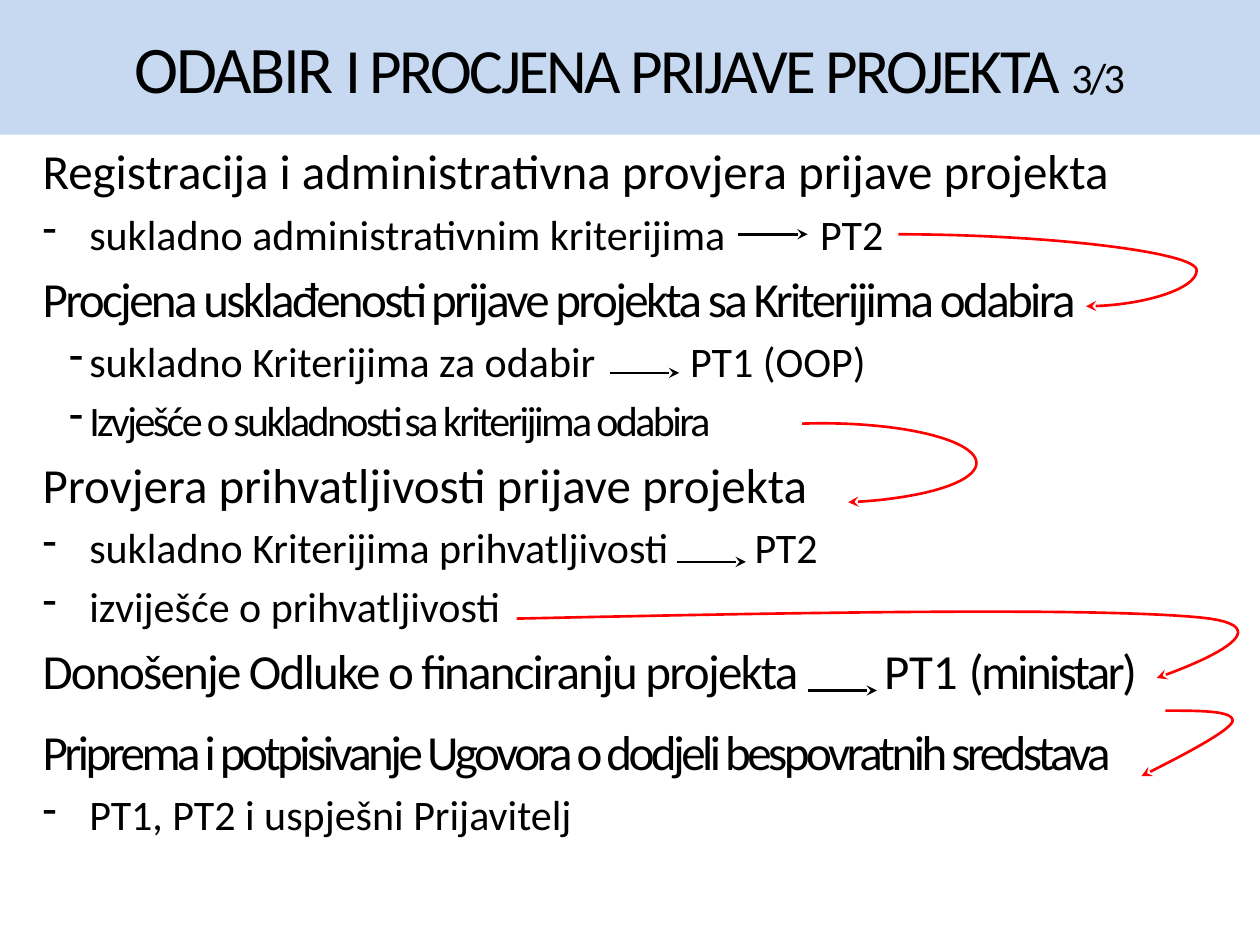
from dataclasses import dataclass

from lxml.etree import SubElement
from pptx import Presentation
from pptx.dml.color import RGBColor
from pptx.enum.shapes import MSO_CONNECTOR, MSO_SHAPE
from pptx.enum.text import MSO_ANCHOR, PP_ALIGN
from pptx.oxml.ns import qn
from pptx.util import Pt


@dataclass(frozen=True)
class Theme:
    """Colours, font and type sizes of the slide."""
    font: str = "Calibri"
    ink: RGBColor = RGBColor(0, 0, 0)
    band: RGBColor = RGBColor(0xC6, 0xD9, 0xF1)
    accent: RGBColor = RGBColor(0xFF, 0, 0)
    title: int = 36
    title_lead: int = 38
    step: int = 28
    detail: int = 24
    line: float = 1.5
    space_width: float = 0.226


THEME = Theme()
STEP, DETAIL = THEME.step, THEME.detail
WIDE, NARROW = (26.64, -26.64), (26.64, -11.52)


def gap(width, size):
    """Return a single space stretched to the given width."""
    return " ", round(width - size * THEME.space_width, 2)


STEPS = [
    (STEP, None, [("Registracija i administrativna provjera prijave projekta", 0)]),
    (DETAIL, WIDE, [("sukladno administrativnim kriterijima", 0), gap(54, DETAIL), ("PT2", 0)]),
    (STEP, None, [("Procjena usklađenosti prijave projekta sa Kriterijima odabira", -1.5)]),
    (DETAIL, NARROW, [("sukladno Kriterijima za odabir", 0), gap(54, DETAIL), ("PT1 (OOP)", 0)]),
    (DETAIL, NARROW, [("Izvješće o sukladnosti sa kriterijima odabira", -1.5)]),
    (STEP, None, [("Provjera prihvatljivosti prijave projekta", 0)]),
    (DETAIL, WIDE, [("sukladno Kriterijima prihvatljivosti", 0), gap(49, DETAIL), ("PT2", 0)]),
    (DETAIL, WIDE, [("izviješće o prihvatljivosti", 0)]),
    (STEP, None, [("Donošenje Odluke o financiranju projekta", -1), gap(49, STEP),
                  ("PT1 ", 0), ("(ministar)", -1.5)]),
    (STEP, None, [("Priprema i potpisivanje Ugovora o dodjeli bespovratnih sredstava", -2)]),
    (DETAIL, WIDE, [("PT1, PT2 i uspješni Prijavitelj", 0)]),
]
EXTRA_SPACE = {9: 7}

INLINE_ARROWS = [(404.6, 56.9), (331.2, 136.1), (369.3, 244.1), (444.2, 317.6)]
INLINE_LENGTH = 39.6
RETURN_CURVES = [
    [(277.9, 276.5), (442.8, 272.9), (606.9, 270), (668.1, 275.8),
     (729.3, 281.6), (643.7, 310.4), (643.7, 310.4)],
    [(648.7, 329.1), (668.9, 329.1), (689, 329.1), (686.9, 335.6),
     (684, 341.3), (659.5, 354.3), (635, 366.5)],
]


def add_run(paragraph, text, spacing):
    """Add a run with letter spacing in points."""
    run = paragraph.add_run()
    run.text = text
    if spacing:
        run.font._element.set("spc", str(round(spacing * 100)))
    return run


def style_paragraph(paragraph, size=None):
    """Give a paragraph the theme font and colour."""
    paragraph.font.name = THEME.font
    paragraph.font.color.rgb = THEME.ink
    if size:
        paragraph.font.size = Pt(size)


def add_title(slide, left, top, width, height):
    """Place the title band."""
    band = slide.shapes.add_shape(MSO_SHAPE.RECTANGLE, Pt(left), Pt(top), Pt(width), Pt(height))
    band.shadow.inherit = False
    band.fill.solid()
    band.fill.fore_color.rgb = THEME.band
    band.line.fill.background()
    band.text_frame.word_wrap = True
    band.text_frame.vertical_anchor = MSO_ANCHOR.MIDDLE
    heading = band.text_frame.paragraphs[0]
    heading.alignment = PP_ALIGN.CENTER
    style_paragraph(heading)
    for text, size in [("ODABIR", THEME.title_lead),
                       (" I PROCJENA PRIJAVE PROJEKTA ", THEME.title),
                       ("3/3", THEME.detail)]:
        run = add_run(heading, text, -1.5)
        run.font.size = Pt(size)
        run.font.color.rgb = THEME.ink


def add_steps(slide, left, top, width, height):
    """Place the procedure steps with their dashed details."""
    body = slide.shapes.add_textbox(Pt(left), Pt(top), Pt(width), Pt(height)).text_frame
    body.word_wrap = True
    for index, (size, indent, runs) in enumerate(STEPS):
        paragraph = body.add_paragraph() if index else body.paragraphs[0]
        paragraph.alignment = PP_ALIGN.LEFT
        paragraph.space_before = Pt(0.2 * size + EXTRA_SPACE.get(index, 0))
        if indent:
            properties = paragraph._p.get_or_add_pPr()
            properties.set("marL", str(Pt(indent[0])))
            properties.set("indent", str(Pt(indent[1])))
            SubElement(properties, qn("a:buChar")).set("char", "-")
        style_paragraph(paragraph, size)
        for text, spacing in runs:
            add_run(paragraph, text, spacing)


def style_arrow(arrow, color):
    """Give a line its colour, width and stealth head."""
    arrow.line.color.rgb = color
    arrow.line.width = Pt(THEME.line)
    outline = arrow._element.spPr.find(qn("a:ln"))
    SubElement(outline, qn("a:tailEnd")).set("type", "stealth")


def add_connector(slide, kind, start, end, color):
    """Draw a connector with an arrowhead and no shadow."""
    connector = slide.shapes.add_connector(kind, *map(Pt, (*start, *end)))
    style_arrow(connector, color)
    SubElement(connector._element.spPr, qn("a:effectLst"))
    return connector


def bezier_points(controls, count=30):
    """Return points along a chain of cubic curves."""
    points = [controls[0]]
    for first in range(0, len(controls) - 1, 3):
        a, b, c, d = controls[first:first + 4]
        for step in range(1, count + 1):
            t = step / count
            u = 1 - t
            points.append(tuple(
                u**3 * a[i] + 3 * u * u * t * b[i] + 3 * u * t * t * c[i] + t**3 * d[i]
                for i in (0, 1)))
    return points


def add_arrows(slide, left, top):
    """Place inline arrows and red arrows leading to the next step."""
    for x, y in INLINE_ARROWS:
        add_connector(slide, MSO_CONNECTOR.STRAIGHT, (left + x, top + y),
                      (left + x + INLINE_LENGTH, top + y), THEME.ink)

    first_return = add_connector(slide, MSO_CONNECTOR.CURVE, (left + 496.1, top + 56.9),
                                 (left + 603.3, top + 98), THEME.accent)
    guides = first_return._element.spPr.find(qn("a:prstGeom")).get_or_add_avLst()
    bend = SubElement(guides, qn("a:gd"))
    bend.set("name", "adj1")
    bend.set("fmla", "val 159000")

    arc = slide.shapes.add_shape(MSO_SHAPE.ARC, Pt(left + 365), Pt(top + 164.9),
                                 Pt(175.7), Pt(45.4))
    arc.adjustments[0], arc.adjustments[1] = 145.45, 34.17
    returns = [arc]
    for controls in RETURN_CURVES:
        start, *rest = [(Pt(left + x), Pt(top + y)) for x, y in bezier_points(controls)]
        builder = slide.shapes.build_freeform(*start)
        builder.add_line_segments(rest, close=False)
        returns.append(builder.convert_to_shape())
    for shape in returns:
        shape.shadow.inherit = False
        shape.fill.background()
        style_arrow(shape, THEME.accent)


def main():
    """Build and save the slide."""
    deck = Presentation()
    deck.slide_width, deck.slide_height = Pt(720), Pt(540)
    slide = deck.slides.add_slide(deck.slide_layouts[6])
    add_steps(slide, 17.3, 77, 691.9, 457.2)
    add_title(slide, 0, 0, 720, 77)
    add_arrows(slide, 17.3, 77)
    deck.save("out.pptx")


if __name__ == "__main__":
    main()
